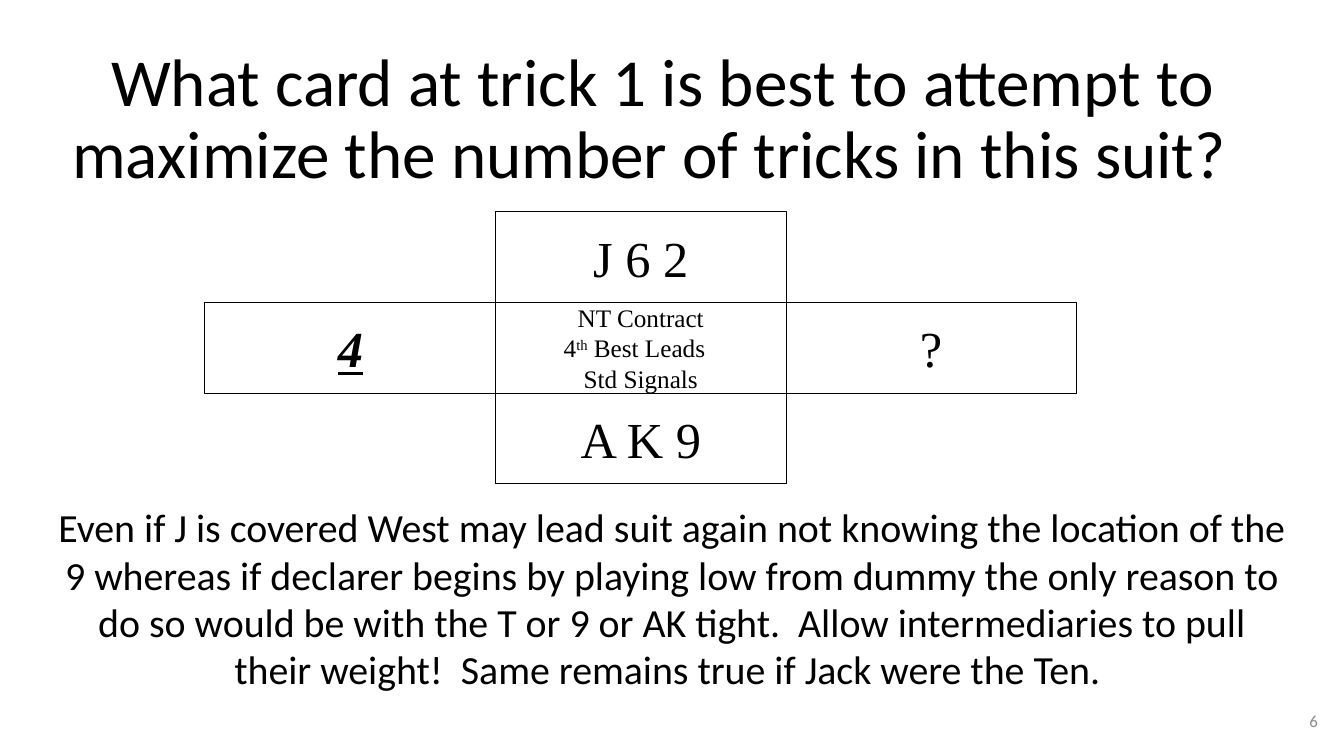
from pptx import Presentation
from pptx import util as u
from pptx.dml.color import RGBColor
from pptx.enum import shapes, text as t

PX = 9144
BLACK = RGBColor(0, 0, 0)
WHITE = RGBColor(255, 255, 255)
GRAY = RGBColor(0x8C, 0x8C, 0x8C)
SANS = "Calibri"
SERIF = "Times New Roman"
GRID_LEFT, GRID_TOP = 203, 210
COLUMN_STEP, CELL_WIDTH, ROW_HEIGHT = 288, 289, 90
HANDS = [
    (1, 0, "J 6 2", {}),
    (0, 1, "4", {"bold": True, "italic": True, "underline": True}),
    (2, 1, "?", {}),
    (1, 2, "A K 9", {}),
]


def px(*lengths):
    return [u.Emu(length * PX) for length in lengths]


def add_run(paragraph, content, size, font=SANS, color=BLACK, bold=False,
            italic=False, underline=False, raised=False):
    run = paragraph.add_run()
    run.text = content
    run.font.size = u.Pt(size)
    run.font.name = font
    run.font.color.rgb = color
    run.font.bold = bold
    run.font.italic = italic
    run.font.underline = underline
    if raised:
        run.font._element.set("baseline", "30000")


def add_paragraph(frame, first=False, align=t.PP_ALIGN.CENTER, spacing=1.0):
    paragraph = frame.paragraphs[0] if first else frame.add_paragraph()
    paragraph.alignment = align
    paragraph.line_spacing = spacing
    return paragraph


def add_text_box(slide, box, anchor=t.MSO_ANCHOR.MIDDLE):
    frame = slide.shapes.add_textbox(*px(*box)).text_frame
    frame.word_wrap = True
    frame.vertical_anchor = anchor
    return frame


def add_cell(slide, column, row):
    box = px(GRID_LEFT + column * COLUMN_STEP, GRID_TOP + row * ROW_HEIGHT,
             CELL_WIDTH, ROW_HEIGHT)
    shape = slide.shapes.add_shape(shapes.MSO_SHAPE.RECTANGLE, *box)
    shape.shadow.inherit = False
    shape.fill.solid()
    shape.fill.fore_color.rgb = WHITE
    shape.line.color.rgb = BLACK
    shape.line.width = u.Pt(0.75)
    frame = shape.text_frame
    frame.word_wrap = True
    frame.vertical_anchor = t.MSO_ANCHOR.MIDDLE
    frame.margin_top = frame.margin_bottom = 0
    return frame


def add_contract(slide):
    frame = add_cell(slide, 1, 1)
    add_run(add_paragraph(frame, first=True), "NT Contract", 18, SERIF)
    leads = add_paragraph(frame)
    add_run(leads, "4", 18, SERIF)
    add_run(leads, "th", 18, SERIF, raised=True)
    add_run(leads, " Best Leads  ", 18, SERIF)
    add_run(add_paragraph(frame), "Std Signals", 18, SERIF)


def main():
    presentation = Presentation()
    presentation.slide_width, presentation.slide_height = px(1333, 750)
    slide = presentation.slides.add_slide(presentation.slide_layouts[6])

    title = add_paragraph(add_text_box(slide, (38, 30, 1239, 180)),
                          first=True, spacing=0.9)
    add_run(title, "What card at trick 1 is best to attempt to maximize "
                   "the number of tricks in this suit? ", 48)
    add_run(title, " ", 36)

    for column, row, cards, style in HANDS:
        paragraph = add_paragraph(add_cell(slide, column, row), first=True)
        add_run(paragraph, cards, 36, SERIF, **style)
    add_contract(slide)

    advice = add_text_box(slide, (47, 496, 1239, 224), t.MSO_ANCHOR.TOP)
    add_run(add_paragraph(advice, first=True, spacing=0.99),
            "Even if J is covered West may lead suit again not knowing the "
            "location of the 9 whereas if declarer begins by playing low from "
            "dummy the only reason to do so would be with the T or 9 or AK "
            "tight.  Allow intermediaries to pull their weight!  Same remains "
            "true if Jack were the Ten. ", 28.5)

    number = add_text_box(slide, (1017, 695, 300, 40))
    add_run(add_paragraph(number, first=True, align=t.PP_ALIGN.RIGHT),
            "6", 12, color=GRAY)
    presentation.save("out.pptx")


if __name__ == "__main__":
    main()
